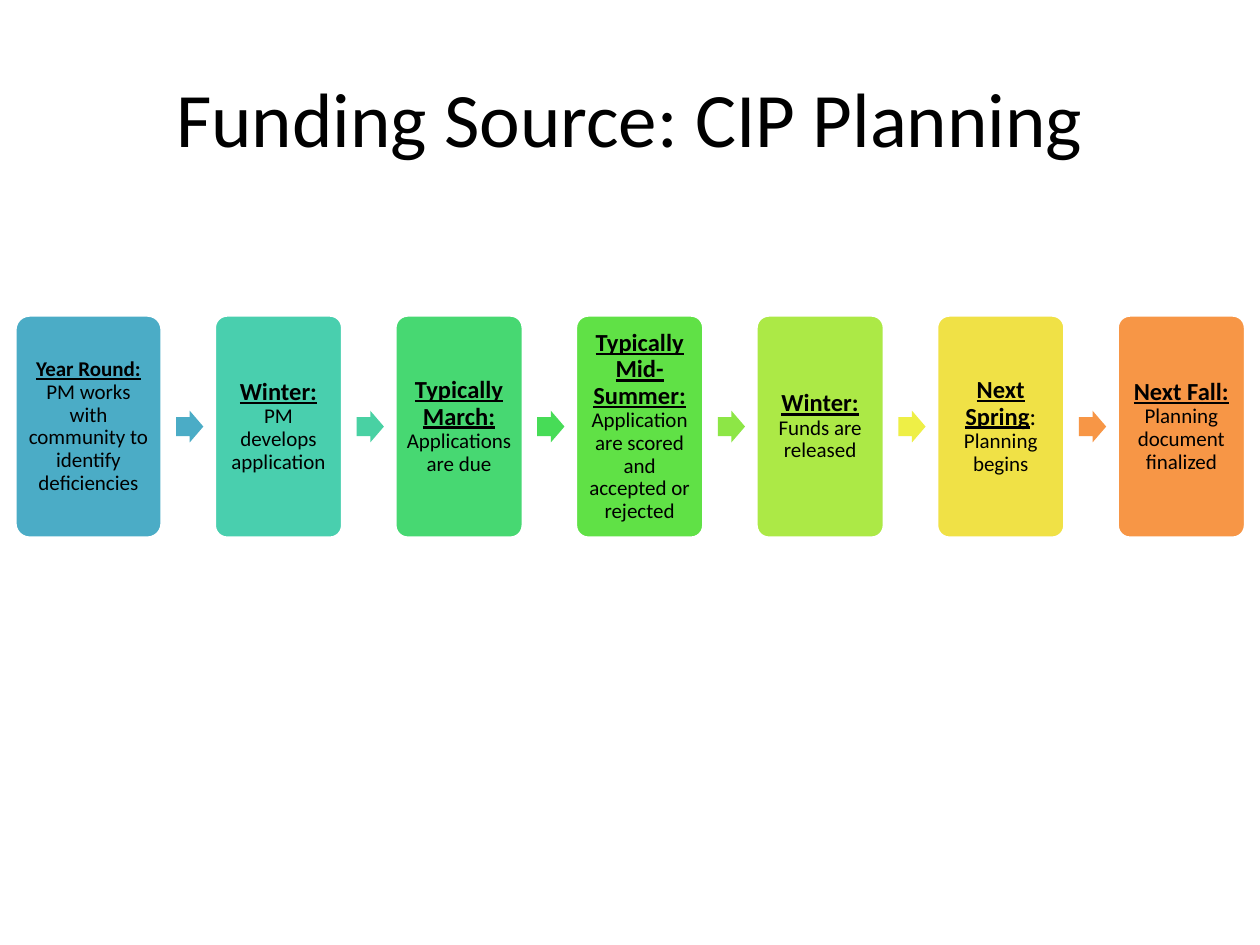
from dataclasses import dataclass

from pptx import Presentation
from pptx.dml.color import RGBColor
from pptx.enum.shapes import MSO_SHAPE
from pptx.enum.text import MSO_ANCHOR, PP_ALIGN
from pptx.util import Cm, Pt


@dataclass(frozen=True)
class Theme:
    font: str = "Calibri"
    text: str = "000000"
    outline: str = "FFFFFF"
    title_size: int = 44
    heading_size: int = 14
    body_size: int = 12


@dataclass(frozen=True)
class Step:
    heading: str
    body: str
    fill: str
    arrow_fill: str = ""
    separator: str = ""
    heading_size: int = Theme.heading_size
    width: float = 2.59
    margin: float = 0.15


THEME = Theme()
STEPS = [
    Step("Year Round: ", "PM works with community to identify deficiencies",
         "4BACC6", "4BACC6", heading_size=THEME.body_size, width=2.97, margin=0.13),
    Step("Winter: ", "PM develops application", "49CFAE", "49D1A3"),
    Step("Typically March: ", "Applications are due", "47D872", "47DC57"),
    Step("Typically Mid-Summer: ", "Application are scored and accepted or rejected",
         "60E146", "8DE646"),
    Step("Winter: ", "Funds are released", "ACE946", "EEEF46"),
    Step("Next Spring", "Planning begins", "F0E146", "F79646", separator=": "),
    Step("Next Fall: ", "Planning document finalized", "F79646"),
]
CARD_GAP = 1.05
ARROW_OFFSET, ARROW_WIDTH, ARROW_HEIGHT = 0.28, 0.55, 0.64


def set_paragraph_style(paragraph, size):
    paragraph.alignment = PP_ALIGN.CENTER
    paragraph.font.name = THEME.font
    paragraph.font.size = Pt(size)
    paragraph.font.color.rgb = RGBColor.from_string(THEME.text)


def add_title(slide, text, left, top, width, height):
    box = slide.shapes.add_textbox(Cm(left), Cm(top), Cm(width), Cm(height))
    frame = box.text_frame
    frame.word_wrap = True
    frame.vertical_anchor = MSO_ANCHOR.MIDDLE
    paragraph = frame.paragraphs[0]
    paragraph.text = text
    set_paragraph_style(paragraph, THEME.title_size)


def add_filled_shape(slide, kind, fill, left, top, width, height):
    shape = slide.shapes.add_shape(kind, Cm(left), Cm(top), Cm(width), Cm(height))
    shape.shadow.inherit = False
    shape.fill.solid()
    shape.fill.fore_color.rgb = RGBColor.from_string(fill)
    shape.line.fill.background()
    return shape


def add_card(slide, step, left, top, height):
    card = add_filled_shape(slide, MSO_SHAPE.ROUNDED_RECTANGLE, step.fill,
                            left, top, step.width, height)
    card.adjustments[0] = 0.1
    card.line.color.rgb = RGBColor.from_string(THEME.outline)
    card.line.width = Pt(2)

    frame = card.text_frame
    frame.word_wrap = True
    frame.vertical_anchor = MSO_ANCHOR.MIDDLE
    frame.margin_left = frame.margin_right = Cm(step.margin)
    frame.margin_top = frame.margin_bottom = Cm(step.margin)

    paragraph = frame.paragraphs[0]
    paragraph.line_spacing = 0.9
    set_paragraph_style(paragraph, THEME.body_size)
    heading = paragraph.add_run()
    heading.text = step.heading
    heading.font.size = Pt(step.heading_size)
    heading.font.bold = heading.font.underline = True
    if step.separator:
        separator = paragraph.add_run()
        separator.text = step.separator
        separator.font.size = Pt(step.heading_size)
    paragraph.add_run().text = step.body


def add_process(slide, steps, left, top, height):
    """Place the cards in a row, with an arrow in each gap."""
    arrow_top = top + (height - ARROW_HEIGHT) / 2
    for step in steps:
        add_card(slide, step, left, top, height)
        right = left + step.width
        if step.arrow_fill:
            arrow = add_filled_shape(slide, MSO_SHAPE.RIGHT_ARROW, step.arrow_fill,
                                     right + ARROW_OFFSET, arrow_top,
                                     ARROW_WIDTH, ARROW_HEIGHT)
            arrow.adjustments[0] = 0.6
        left = right + CARD_GAP


def main():
    presentation = Presentation()
    presentation.slide_width = Cm(25.4)
    presentation.slide_height = Cm(19.05)
    slide = presentation.slides.add_slide(presentation.slide_layouts[6])
    add_title(slide, "Funding Source: CIP Planning", 1.27, 0.76, 22.86, 3.18)
    add_process(slide, STEPS, left=0.3, top=6.35, height=4.5)
    presentation.save("out.pptx")


if __name__ == "__main__":
    main()
